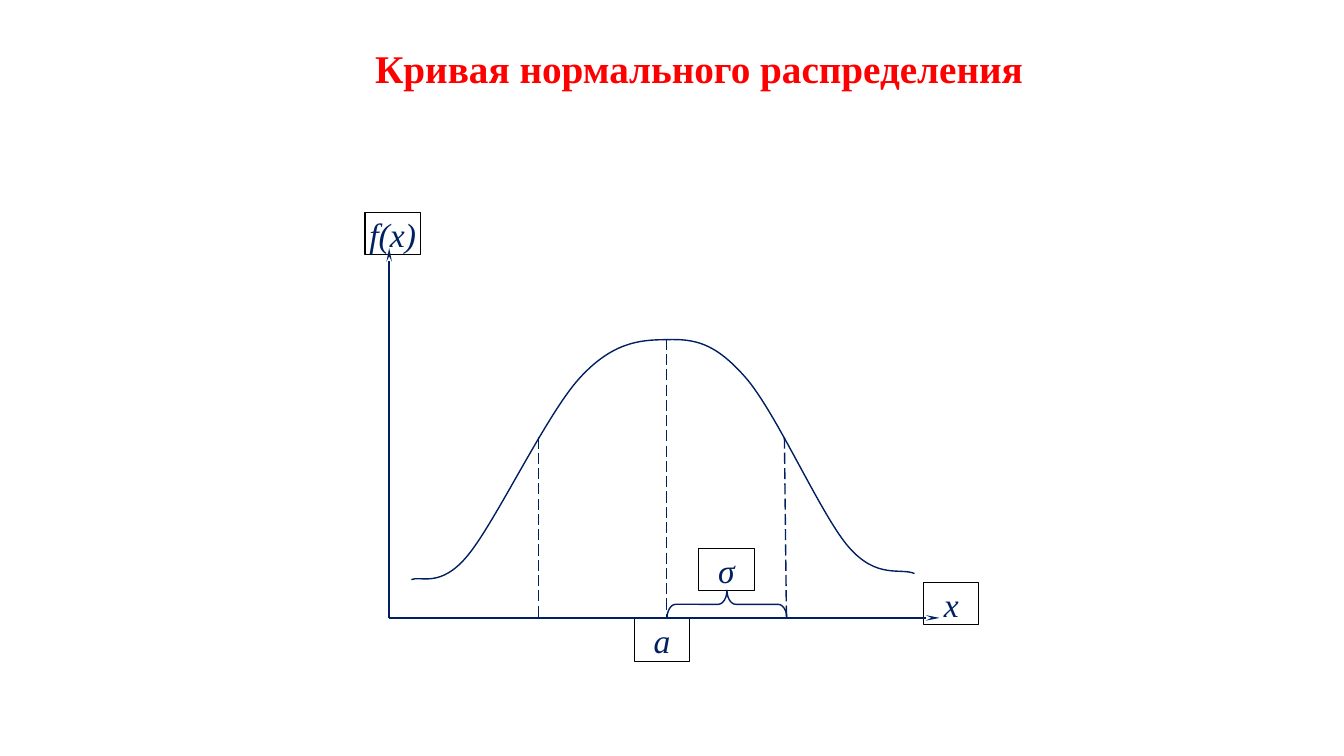
from dataclasses import dataclass

from lxml import etree
from pptx import Presentation
from pptx import util as u
from pptx.dml.color import RGBColor
from pptx.enum import dml, shapes, text
from pptx.oxml import ns

PX = 9144  # 100 px to the inch


@dataclass(frozen=True)
class Theme:
    font: str = "Times New Roman"
    red: str = "FF0000"
    navy: str = "002060"
    black: str = "000000"
    head: int = 28
    label: int = 24
    axis: float = 1.5
    thin: float = 1
    frame: float = 0.75


T = Theme()


def px(*vals):
    return [u.Emu(v * PX) for v in vals]


def write(frame, words, *, size, color, bold=False, italic=False,
          align=text.PP_ALIGN.LEFT):
    frame.vertical_anchor = text.MSO_ANCHOR.MIDDLE
    para = frame.paragraphs[0]
    para.alignment = align
    run = para.add_run()
    run.text = words
    font = run.font
    font.name, font.size = T.font, u.Pt(size)
    font.bold, font.italic = bold, italic
    font.color.rgb = RGBColor.from_string(color)


def stroke(line, color, width, dash=None):
    line.color.rgb = RGBColor.from_string(color)
    line.width = u.Pt(width)
    if dash:
        line.dash_style = dash


def outline(shape, color, width):
    shape.shadow.inherit = False
    shape.fill.background()
    stroke(shape.line, color, width)


def rule(group, start, end, width, dash=None, arrow=False):
    line = group.shapes.add_connector(
        shapes.MSO_CONNECTOR.STRAIGHT, *px(*start, *end))
    stroke(line.line, T.navy, width, dash)
    props = line._element.spPr
    etree.SubElement(props, ns.qn("a:effectLst"))
    if arrow:
        etree.SubElement(props.find(ns.qn("a:ln")), ns.qn("a:tailEnd"),
                         type="stealth", w="sm", len="lg")


def label(group, words, left, top):
    box = group.shapes.add_shape(
        shapes.MSO_SHAPE.RECTANGLE, *px(left, top, 55, 42))
    outline(box, T.black, T.frame)
    frame = box.text_frame
    frame.margin_left = frame.margin_right = 0
    frame.margin_top = frame.margin_bottom = 0
    write(frame, words, size=T.label, color=T.navy, italic=True,
          align=text.PP_ALIGN.CENTER)


def curve(group, start, points):
    """Draw a smooth outline: every three points make one Bezier piece."""
    build = group.shapes.build_freeform(*start, scale=PX)
    build.add_line_segments(points, close=False)
    shape = build.convert_to_shape()
    outline(shape, T.navy, T.thin)
    legs = shape._element.xpath(".//a:lnTo")
    for i in range(0, len(legs), 3):
        bend = etree.Element(ns.qn("a:cubicBezTo"))
        legs[i].addprevious(bend)
        for leg in legs[i:i + 3]:
            bend.append(leg[0])
            leg.getparent().remove(leg)


def title(slide, box):
    head = slide.shapes.title
    head.left, head.top, head.width, head.height = px(*box)
    frame = head.text_frame
    frame.word_wrap = False
    frame.auto_size = text.MSO_AUTO_SIZE.SHAPE_TO_FIT_TEXT
    write(frame, "Кривая нормального распределения", size=T.head,
          color=T.red, bold=True)


def plot(slide, box):
    left, top, wide, high = box
    group = slide.shapes.add_group_shape()

    def at(x, y):
        return left + x, top + y

    # Labels
    for words, x, y in (("σ", 331, 333), ("а", 267, 403),
                        ("x", wide - 55, 367), ("f(x)", 0, 0)):
        label(group, words, *at(x, y))

    # Axes
    base = high - 43
    zero = at(24, base)
    for tip in (at(24, 35), at(570, base)):
        rule(group, zero, tip, T.axis, arrow=True)

    # Bell curve
    bell = [(55, 360), (75, 373), (102, 340),
            (130, 306), (180, 200), (213, 164),
            (245, 129), (272, 126), (299, 126),
            (327, 125), (347, 129), (377, 163),
            (408, 198), (452, 300), (480, 332),
            (508, 364), (531, 352), (545, 358)]
    curve(group, at(46, 364), [at(*p) for p in bell])

    # Mean and one deviation on each side
    for x, y, foot in ((299, 125, 299), (172, 223, 172), (416, 223, 418)):
        rule(group, at(x, y), at(foot, base + 1), T.thin,
             dash=dml.MSO_LINE.LONG_DASH)

    # Brace over one deviation
    brace = group.shapes.add_shape(
        shapes.MSO_SHAPE.RIGHT_BRACE, *px(*at(345, 329), 28, 119))
    brace.rotation = 270
    brace.adjustments[0], brace.adjustments[1] = 0.31, 0.5
    outline(brace, T.navy, T.thin)


def main():
    deck = Presentation()
    deck.slide_width, deck.slide_height = px(1333, 750)
    slide = deck.slides.add_slide(deck.slide_layouts.get_by_name("Title Only"))
    title(slide, (362, 39, 680, 57))
    plot(slide, (362, 211, 609, 445))
    deck.save("out.pptx")


if __name__ == "__main__":
    main()
